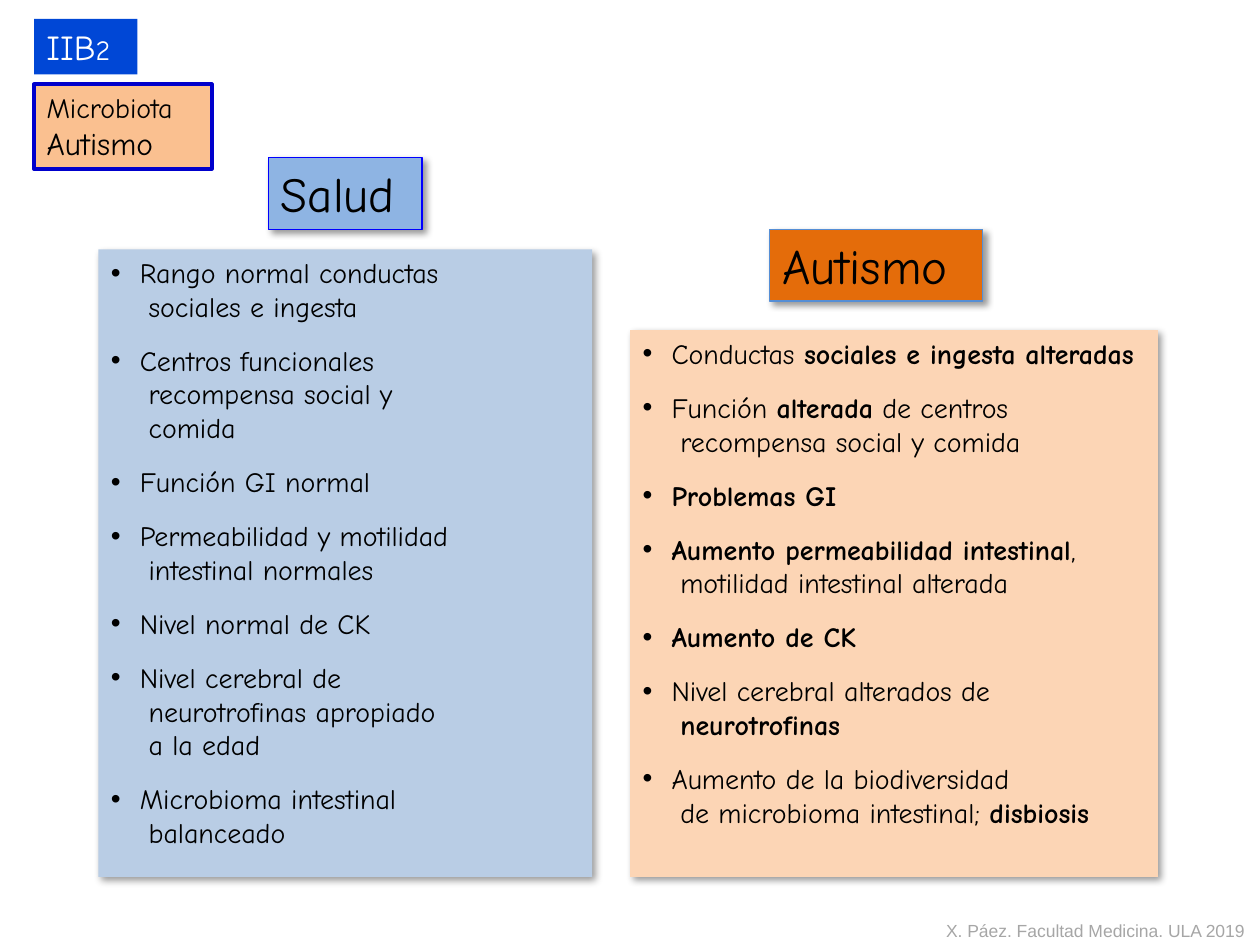
"""Builds the slide comparing gut microbiota traits in health and autism."""
from lxml import etree
from pptx import Presentation
from pptx.dml.color import RGBColor
from pptx.enum.shapes import MSO_SHAPE
from pptx.enum.text import MSO_ANCHOR, MSO_AUTO_SIZE, PP_ALIGN
from pptx.oxml import parse_xml
from pptx.oxml.ns import qn
from pptx.util import Inches, Pt

RECTANGLE = MSO_SHAPE.RECTANGLE
TOP = MSO_ANCHOR.TOP
LEFT = PP_ALIGN.LEFT
NO_FIT = MSO_AUTO_SIZE.NONE
COMPARISON_LAYOUT = 4

COLORS = {
    "black": "000000", "white": "FFFFFF", "gray": "A6A6A6",
    "code": "0047D6", "topic": "FAC090", "topic_line": "0000CC",
    "health": "8EB4E3", "health_line": "0000FF", "health_list": "B9CDE5",
    "autism": "E46C0A", "autism_line": "558ED5", "autism_list": "FCD5B5",
}

SHADOW = (
    '<a:effectLst xmlns:a="http://schemas.openxmlformats.org/drawingml/2006/main">'
    '<a:outerShdw blurRad="50800" dist="38100" dir="2700000" algn="tl" rotWithShape="0">'
    '<a:srgbClr val="000000"><a:alpha val="40000"/></a:srgbClr>'
    "</a:outerShdw></a:effectLst>"
)

HEALTH_TRAITS = [
    ["Rango normal conductas", "sociales e ingesta"],
    ["Centros funcionales", "recompensa social y", "comida"],
    ["Función GI normal"],
    ["Permeabilidad y motilidad", "intestinal normales"],
    ["Nivel normal de CK"],
    ["Nivel cerebral de", "neurotrofinas apropiado", "a la edad"],
    ["Microbioma intestinal", "balanceado"],
]
AUTISM_TRAITS = [
    ["Conductas **sociales e ingesta alteradas**"],
    ["Función **alterada** de centros", "recompensa social y comida"],
    ["**Problemas GI**"],
    ["**Aumento permeabilidad intestinal**,", "motilidad intestinal alterada"],
    ["**Aumento de CK**"],
    ["Nivel cerebral alterados de", "**neurotrofinas**"],
    ["Aumento de la biodiversidad", "de microbioma intestinal; **disbiosis**"],
]


class SlideStyle:
    """Holds the style and the current slide."""

    font = "Comic Neue"
    list_size = 16
    item_gap = 11.7
    bullet_indent = 0.23
    follow_indent = 0.3

    def __init__(self, slide):
        self.slide = slide

    def place(self, shape, box):
        """Move a shape to left, top, width and height in inches."""
        for side, length in zip(("left", "top", "width", "height"), box):
            setattr(shape, side, Inches(length))

    def decorate(self, shape, fill, line=None, width=0.75, shadow=False):
        """Set the fill, outline and shadow of a shape."""
        shape.fill.solid()
        shape.fill.fore_color.rgb = RGBColor.from_string(COLORS[fill])
        if line:
            shape.line.color.rgb = RGBColor.from_string(COLORS[line])
            shape.line.width = Pt(width)
        else:
            shape.line.fill.background()
        if shadow:
            shape._element.spPr.append(parse_xml(SHADOW))

    def frame(self, shape, wrap=True):
        """Prepare and return the text frame of a shape."""
        frame = shape.text_frame
        formats = {"auto_size": NO_FIT, "word_wrap": wrap, "vertical_anchor": TOP}
        for name, value in formats.items():
            setattr(frame, name, value)
        return frame

    def paragraph(self, frame, first, gap=0):
        """Return the first paragraph or a new one, with its spacing."""
        paragraph = frame.paragraphs[0] if first else frame.add_paragraph()
        formats = {"alignment": LEFT, "space_before": Pt(gap), "space_after": Pt(0)}
        for name, value in formats.items():
            setattr(paragraph, name, value)
        return paragraph

    def run(self, paragraph, text, size, color="black", bold=False, font=None):
        """Add one formatted run."""
        run = paragraph.add_run()
        run.text = text
        formats = {"name": font or self.font, "size": Pt(size), "bold": bold}
        for name, value in formats.items():
            setattr(run.font, name, value)
        run.font.color.rgb = RGBColor.from_string(COLORS[color])

    def label(self, shape, box, lines, color="black", **look):
        """Format a filled label whose lines are lists of text and size."""
        self.place(shape, box)
        self.decorate(shape, **look)
        frame = self.frame(shape)
        for number, runs in enumerate(lines):
            paragraph = self.paragraph(frame, number == 0)
            for text, size in runs:
                self.run(paragraph, text, size, color)

    def rectangle(self, box, lines, color, **look):
        """Add a rectangular label."""
        shape = self.slide.shapes.add_shape(RECTANGLE, *map(Inches, box))
        shape.shadow.inherit = False
        self.label(shape, box, lines, color, **look)

    def bullet(self, paragraph, leads):
        """Indent a list line and give a leading line its bullet."""
        properties = paragraph._p.get_or_add_pPr()
        indent = self.bullet_indent if leads else self.follow_indent
        properties.set("marL", str(Inches(indent)))
        properties.set("indent", str(-Inches(indent) if leads else 0))
        if leads:
            etree.SubElement(properties, qn("a:buFont")).set("typeface", "Arial")
            etree.SubElement(properties, qn("a:buChar")).set("char", "•")
        else:
            etree.SubElement(properties, qn("a:buNone"))

    def trait_list(self, shape, box, traits, fill):
        """Fill a body placeholder with bulleted traits."""
        self.place(shape, box)
        self.decorate(shape, fill, shadow=True)
        frame = self.frame(shape)
        for item, lines in enumerate(traits):
            for row, line in enumerate(lines):
                leads = row == 0
                gap = self.item_gap if leads and item else 0
                paragraph = self.paragraph(frame, leads and item == 0, gap)
                self.bullet(paragraph, leads)
                for part, text in enumerate(line.split("**")):
                    if text:
                        self.run(paragraph, text, self.list_size, bold=part % 2 == 1)

    def credit(self, box, text):
        """Add the small credit line."""
        shape = self.slide.shapes.add_textbox(*map(Inches, box))
        paragraph = self.paragraph(self.frame(shape, wrap=False), True)
        self.run(paragraph, text, 10, "gray", font="Arial")


def main():
    """Build and save the slide."""
    deck = Presentation()
    deck.slide_width, deck.slide_height = Inches(10), Inches(7.5)
    slide = deck.slides.add_slide(deck.slide_layouts[COMPARISON_LAYOUT])
    topic, health, health_list, autism, autism_list = slide.placeholders
    style = SlideStyle(slide)

    style.label(health, (2.13, 1.25, 1.22, 0.57), [[("Salud", 28)]],
                fill="health", line="health_line", shadow=True)
    style.label(autism, (6.11, 1.82, 1.69, 0.57), [[("Autismo", 28)]],
                fill="autism", line="autism_line", shadow=True)
    style.trait_list(health_list, (0.78, 1.98, 3.92, 4.98), HEALTH_TRAITS, "health_list")
    style.trait_list(autism_list, (5, 2.62, 4.19, 4.34), AUTISM_TRAITS, "autism_list")
    style.credit((7.41, 7.25, 2.59, 0.27), "X. Páez. Facultad Medicina. ULA 2019")
    style.rectangle((0.27, 0.15, 0.82, 0.44), [[("IIB", 20), ("2", 16)]],
                    "white", fill="code")
    style.label(topic, (0.27, 0.67, 1.41, 0.67),
                [[("Microbiota", 16)], [("Autismo", 18)]],
                fill="topic", line="topic_line", width=2.25)
    deck.save("out.pptx")


if __name__ == "__main__":
    main()
